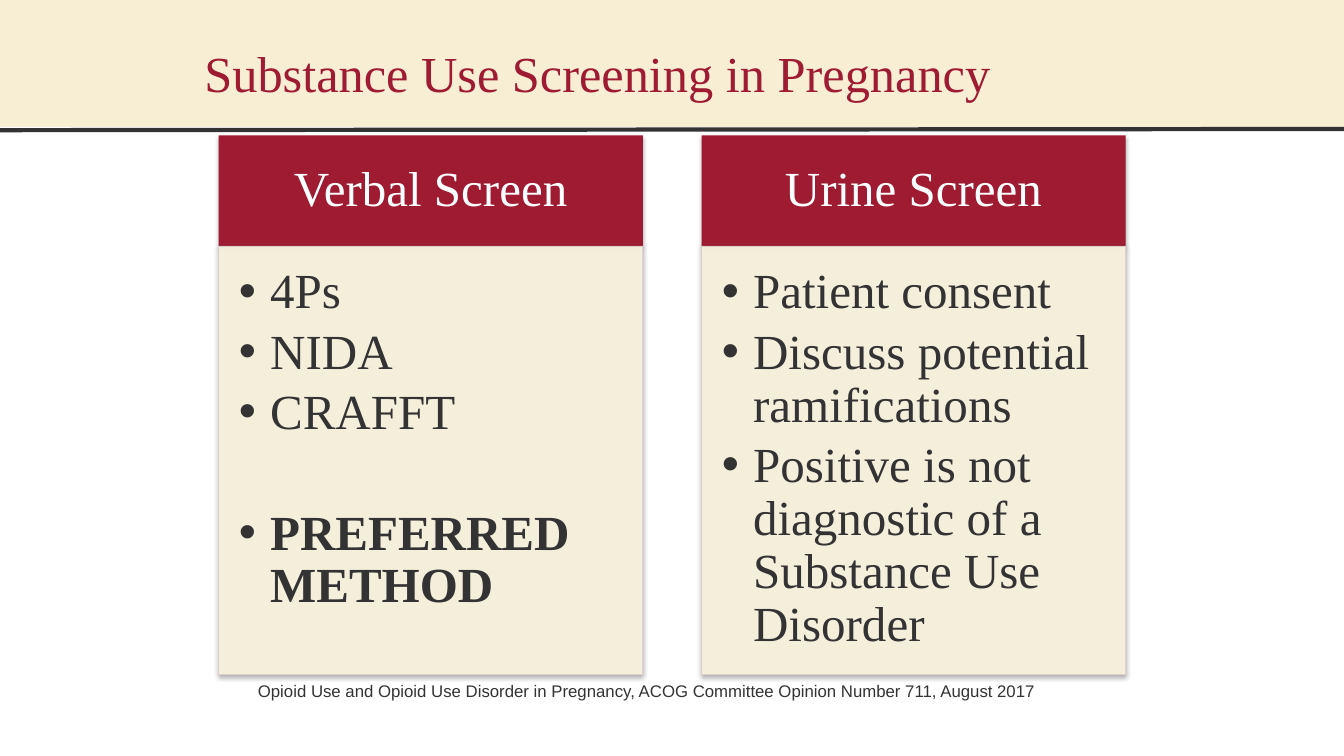
"""Builds a slide comparing verbal and urine substance use screening in pregnancy."""
from lxml.etree import SubElement
from pptx import Presentation
from pptx.dml.color import RGBColor
from pptx.enum.shapes import MSO_CONNECTOR, MSO_SHAPE
from pptx.enum.text import MSO_ANCHOR, PP_ALIGN
from pptx.oxml import parse_xml
from pptx.oxml.ns import nsdecls, qn
from pptx.util import Cm, Pt

CRIMSON, CHARCOAL, SERIF = "9E1B32", "333333", "Times New Roman"
SCREENS = [
    ("Verbal Screen", ["4Ps", "NIDA", "CRAFFT", "PREFERRED METHOD"]),
    ("Urine Screen", ["Patient consent", "Discuss potential ramifications",
                      "Positive is not diagnostic of a Substance Use Disorder"]),
]
SHADOW = (f'<a:effectLst {nsdecls("a")}><a:outerShdw blurRad="40000" dist="23000" '
          'dir="5400000" rotWithShape="0"><a:srgbClr val="000000">'
          '<a:alpha val="35000"/></a:srgbClr></a:outerShdw></a:effectLst>')


def rgb(value):
    return RGBColor.from_string(value)


def style(paragraph, size, font, color):
    for run in paragraph.runs:
        run.font.size, run.font.name = Pt(size), font
        run.font.color.rgb = rgb(color)


deck = Presentation()
deck.slide_width, deck.slide_height = Cm(33.87), Cm(19.05)
slide = deck.slides.add_slide(deck.slide_layouts[6])
shapes = slide.shapes

band = shapes.add_shape(MSO_SHAPE.RECTANGLE, 0, 0, deck.slide_width, Cm(3.2))
band.shadow.inherit = False
band.fill.solid()
band.fill.fore_color.rgb = rgb("F7EED4")
band.line.fill.background()

divider = shapes.add_connector(MSO_CONNECTOR.STRAIGHT, 0, Cm(3.28), deck.slide_width, Cm(3.25))
divider.line.color.rgb = rgb(CHARCOAL)
divider.line.width = Pt(3)
SubElement(divider._element.spPr, qn("a:effectLst"))

for column, (heading, points) in enumerate(SCREENS):
    left = Cm(5.51 + 12.17 * column)
    header = shapes.add_shape(MSO_SHAPE.RECTANGLE, left, Cm(3.41), Cm(10.69), Cm(2.8))
    body = shapes.add_shape(MSO_SHAPE.RECTANGLE, left, Cm(6.21), Cm(10.69), Cm(10.79))

    for panel, fill in ((header, CRIMSON), (body, "FBF7E0")):
        panel.fill.solid()
        panel.fill.fore_color.rgb = rgb(fill)
        panel.line.fill.background()
        panel._element.spPr.append(parse_xml(SHADOW))
        panel.text_frame.word_wrap = True
        panel.text_frame.margin_right = Cm(0.69)

    header_text = header.text_frame
    header_text.margin_left = Cm(0.69)
    header_text.margin_top = header_text.margin_bottom = Cm(0.41)
    header_text.vertical_anchor = MSO_ANCHOR.MIDDLE
    header_text.text = heading
    title_line = header_text.paragraphs[0]
    title_line.alignment = PP_ALIGN.CENTER
    title_line.line_spacing = 0.9
    style(title_line, 35, SERIF, "FFFFFF")

    body.line.color.rgb = rgb("DFCDCE")
    body.line.width = Pt(0.75)
    for color in body._element.spPr.findall(".//" + qn("a:solidFill") + "/" + qn("a:srgbClr")):
        SubElement(color, qn("a:alpha"), val="90000")

    body_text = body.text_frame
    body_text.margin_left = body_text.margin_top = Cm(0.51)
    body_text.margin_bottom = Cm(0.79)
    body_text.vertical_anchor = MSO_ANCHOR.TOP
    body_text.text = "\n".join(points)
    for point in body_text.paragraphs:
        point.alignment = PP_ALIGN.LEFT
        point.line_spacing = 0.9
        point.space_after = Pt(5.25)
        style(point, 35, SERIF, CHARCOAL)
        properties = point._p.get_or_add_pPr()
        properties.set("marL", str(Cm(0.79)))
        properties.set("indent", str(-Cm(0.79)))
        SubElement(properties, qn("a:buFont"), typeface="Arial")
        SubElement(properties, qn("a:buChar"), char="•")
        if point.text == "PREFERRED METHOD":
            point.space_before = Pt(43)
            point.runs[0].font.bold = True

for text, left, top, width, height, size, font, color in (
    ("Opioid Use and Opioid Use Disorder in Pregnancy, ACOG Committee Opinion Number 711, "
     "August 2017", 6.25, 17.02, 20.47, 0.76, 12, "Arial", CHARCOAL),
    ("Substance Use Screening in Pregnancy", 4.9, 0.94, 20.52, 1.8, 36, SERIF, CRIMSON),
):
    caption = shapes.add_textbox(Cm(left), Cm(top), Cm(width), Cm(height)).text_frame
    caption.word_wrap = True
    caption.text = text
    style(caption.paragraphs[0], size, font, color)

deck.save("out.pptx")
